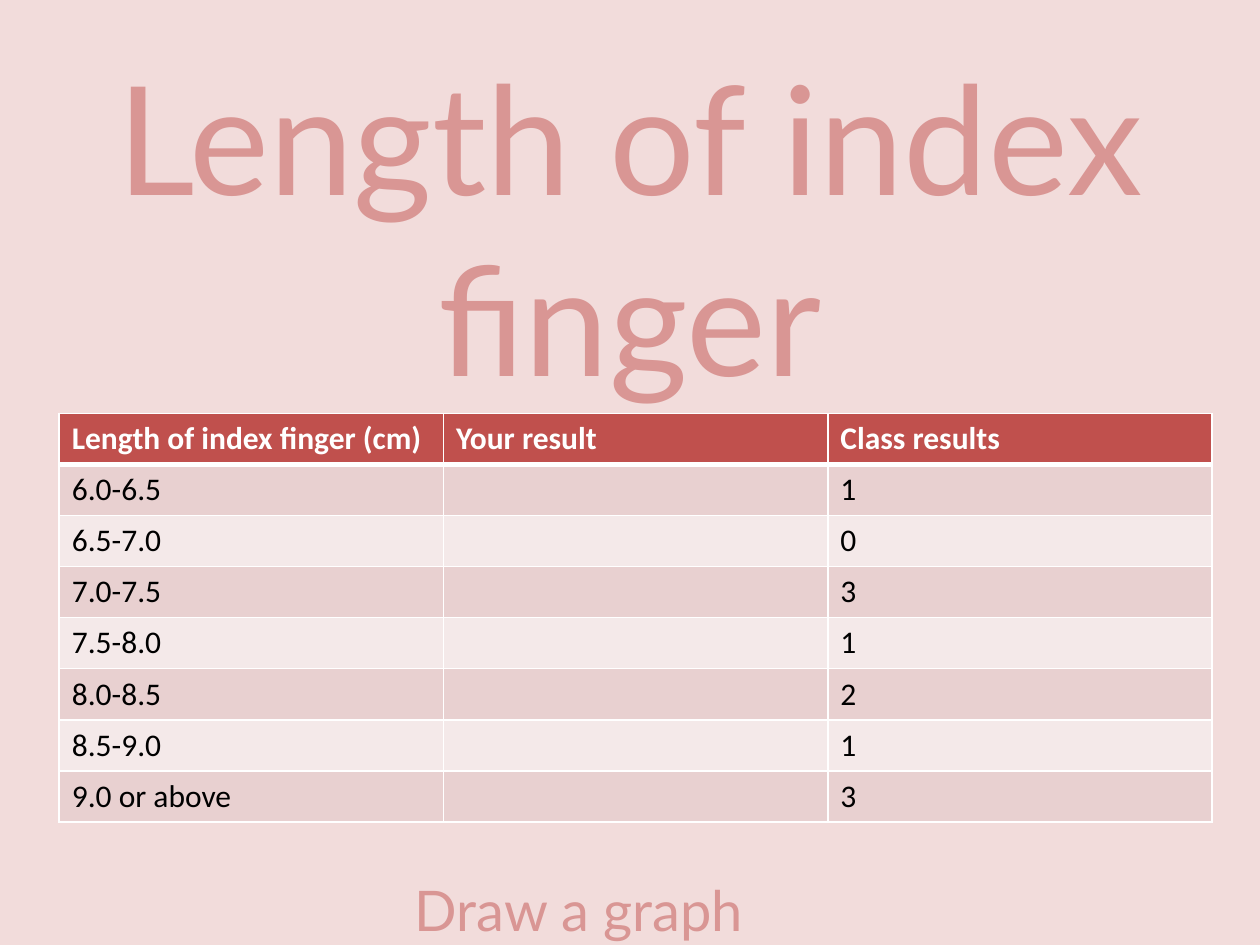
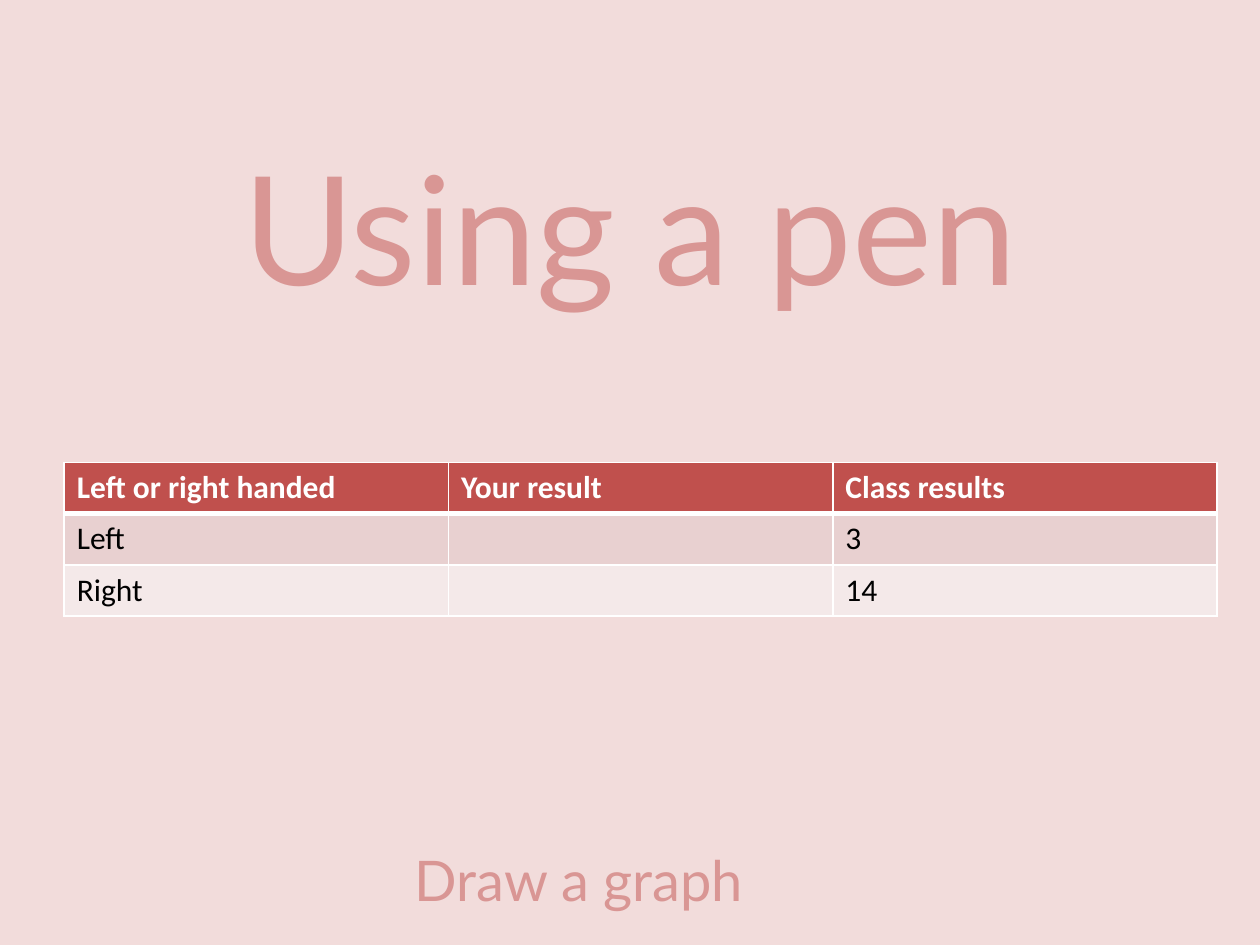
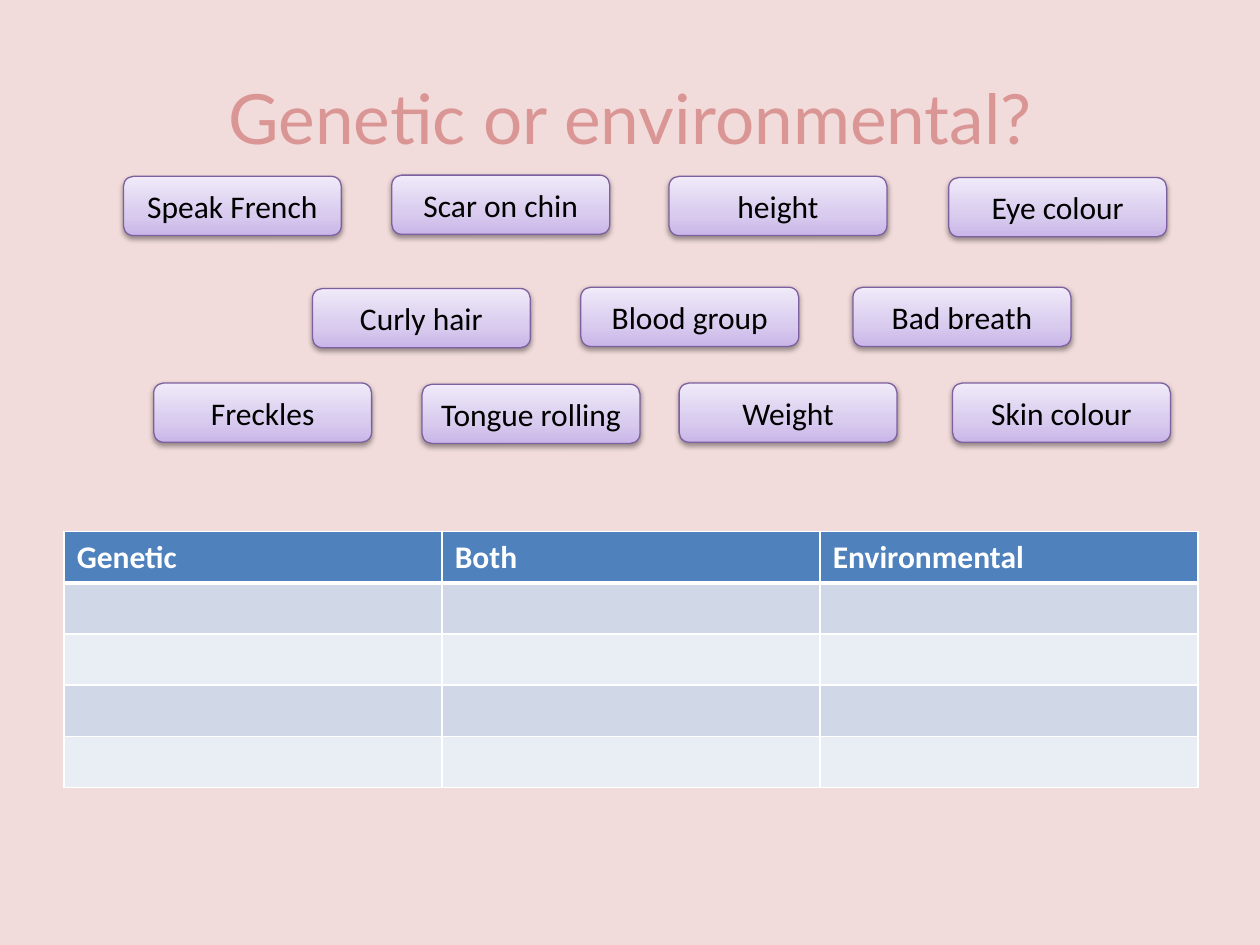
from pptx import Presentation
from pptx.dml.color import RGBColor
from pptx.enum.shapes import MSO_SHAPE as Shape
from pptx.enum.text import MSO_ANCHOR as Anchor, MSO_AUTO_SIZE as Fit, PP_ALIGN as Align
from pptx.oxml import parse_xml
from pptx.oxml.ns import nsdecls
from pptx.util import Inches, Pt

# Shared style
BACK, ROSE, WHITE, BLACK = "F2DCDB", "D99694", "FFFFFF", "000000"
RED = ("C0504D", "E8D0D0", "F4E9E9")  # header, odd row, even row
BLUE = ("4F81BD", "D0D8E8", "E9EDF4")
EDGE = "7D60A0"
LILAC = ((0, "C9B5E8"), (35, "D8CBEE"), (100, "F0EAF9"))
HEAD, BODY = "Lato", "Calibri"


def color(code):
    return RGBColor.from_string(code)


def node(tag, attrs, inner):
    return parse_xml(f'<a:{tag} {nsdecls("a")} {attrs}>{inner}</a:{tag}>')


def paint(code, extra=""):
    return f'<a:srgbClr val="{code}">{extra}</a:srgbClr>'


class Deck:
    def __init__(self):
        self.prs = Presentation()
        self.prs.slide_width, self.prs.slide_height = Inches(10), Inches(7.5)
        fill = self.prs.slide_master.background.fill
        fill.solid()
        fill.fore_color.rgb = color(BACK)
        self.slide = None

    def label(self, frame, text, size, font, code, bold=False, align=None):
        para = frame.paragraphs[0]
        para.alignment = align
        run = para.add_run()
        run.text = text
        run.font.size, run.font.name, run.font.bold = Pt(size), font, bold
        run.font.color.rgb = color(code)

    def start(self, text, size, high):
        """Open a slide and set its title."""
        self.slide = self.prs.slides.add_slide(self.prs.slide_layouts[5])
        title = self.slide.shapes.title
        title.left, title.top = Inches(0.5), Inches(0.3)
        title.width, title.height = Inches(9), Inches(high)
        frame = title.text_frame
        frame.auto_size, frame.vertical_anchor = Fit.NONE, Anchor.MIDDLE
        self.label(frame, text, size, HEAD, ROSE, align=Align.CENTER)

    def prompt(self, text, top):
        box = self.slide.shapes.add_textbox(
            Inches(3.19), Inches(top), Inches(3.71), Inches(0.64))
        box.text_frame.word_wrap = True
        self.label(box.text_frame, text, 32, HEAD, ROSE)

    def border(self, cell, row):
        """White grid, with a thick rule under the header."""
        widths = {"L": 1, "R": 1, "T": 3 if row == 1 else 1, "B": 3 if row == 0 else 1}
        props = cell._tc.get_or_add_tcPr()
        for side, width in widths.items():
            props.append(node(f"ln{side}", f'w="{Pt(width)}"',
                              f"<a:solidFill>{paint(WHITE)}</a:solidFill>"))

    def table(self, rows, place, tones):
        left, top, wide, high = map(Inches, place)
        grid = self.slide.shapes.add_table(
            len(rows), len(rows[0]), left, top, wide, high).table
        for r, row in enumerate(rows):
            tone = tones[0] if r == 0 else tones[2 - r % 2]
            for c, text in enumerate(row):
                cell = grid.cell(r, c)
                self.border(cell, r)
                cell.fill.solid()
                cell.fill.fore_color.rgb = color(tone)
                if text:
                    self.label(cell.text_frame, text, 18, BODY,
                               BLACK if r else WHITE, bold=r == 0)

    def card(self, text, left, top):
        """Rounded lilac card with a soft shadow."""
        card = self.slide.shapes.add_shape(
            Shape.ROUNDED_RECTANGLE, Inches(left), Inches(top), Inches(1.73), Inches(0.47))
        card.line.color.rgb = color(EDGE)
        card.line.width = Pt(0.75)
        card.shadow.inherit = False
        props = card._element.spPr
        stops = "".join(f'<a:gs pos="{at * 1000}">{paint(code)}</a:gs>' for at, code in LILAC)
        props.find("{*}ln").addprevious(node(
            "gradFill", 'rotWithShape="1"',
            f'<a:gsLst>{stops}</a:gsLst><a:lin ang="{270 * 60000}" scaled="0"/>'))
        props.find("{*}effectLst").append(node(
            "outerShdw",
            f'blurRad="{Pt(3.1)}" dist="{Pt(1.6)}" dir="{90 * 60000}" rotWithShape="0"',
            paint(BLACK, '<a:alpha val="38000"/>')))
        card.text_frame.vertical_anchor = Anchor.MIDDLE
        self.label(card.text_frame, text, 18, BODY, BLACK, align=Align.CENTER)


def tally(topic, counts):
    """Rows for a survey with a blank column for the pupil's own result."""
    return [(topic, "Your result", "Class results")] + [
        (name, "", str(count)) for name, count in counts]


def main():
    deck = Deck()

    # Finger survey
    deck.start("Length of index finger", 86.4, 2.98)
    deck.table(tally("Length of index finger (cm)", [
        ("6.0-6.5", 1), ("6.5-7.0", 0), ("7.0-7.5", 3), ("7.5-8.0", 1),
        ("8.0-8.5", 2), ("8.5-9.0", 1), ("9.0 or above", 3),
    ]), (0.47, 3.28, 9.15, 3.24), RED)
    deck.prompt("Draw a graph", 6.9)

    # Hand survey
    deck.start("Using a pen", 86.4, 2.98)
    deck.table(tally("Left or right handed", [("Left", 3), ("Right", 14)]),
               (0.51, 3.67, 9.15, 1.22), RED)
    deck.prompt("Draw a graph", 6.66)

    # Sorting task
    deck.start("Genetic or environmental?", 39.6, 1.25)
    deck.table([("Genetic", "Both", "Environmental")] + [("",) * 3] * 4,
               (0.51, 4.22, 9, 2.03), BLUE)
    for text, left, top in (
        ("Speak French", 0.98, 1.4), ("Scar on chin", 3.11, 1.39),
        ("height", 5.31, 1.4), ("Eye colour", 7.53, 1.41),
        ("Curly hair", 2.48, 2.29), ("Blood group", 4.61, 2.28),
        ("Bad breath", 6.77, 2.28),
        ("Freckles", 1.22, 3.04), ("Tongue rolling", 3.35, 3.05),
        ("Weight", 5.39, 3.04), ("Skin colour", 7.56, 3.04),
    ):
        deck.card(text, left, top)

    deck.prs.save("out.pptx")


if __name__ == "__main__":
    main()
